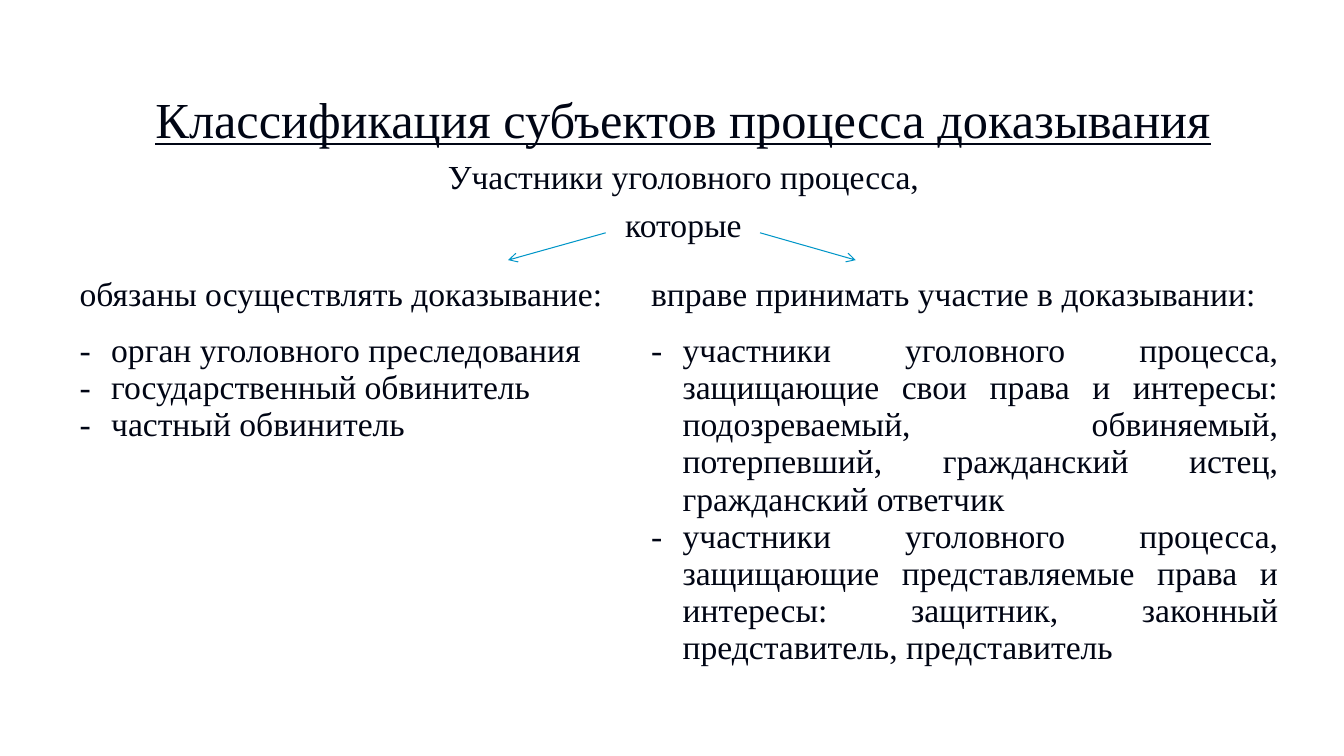
from lxml import etree
from pptx import Presentation
from pptx.dml.color import RGBColor
from pptx.enum.shapes import MSO_CONNECTOR
from pptx.enum.text import PP_ALIGN
from pptx.oxml.ns import qn
from pptx.util import Pt

CENTER, JUSTIFY = PP_ALIGN.CENTER, PP_ALIGN.JUSTIFY
STRAIGHT = MSO_CONNECTOR.STRAIGHT
INK = RGBColor(0x00, 0x05, 0x14)
ARROW_BLUE = RGBColor(0x00, 0x96, 0xC8)
WHITE = RGBColor(0xFF, 0xFF, 0xFF)


def add_text(paragraph, text, size, alignment):
    paragraph.alignment = alignment
    run = paragraph.add_run()
    run.text = text
    run.font.name = "Times New Roman"
    run.font.size = Pt(size)
    run.font.color.rgb = INK
    return run


def add_border(properties, side, width):
    line = etree.SubElement(properties, qn(f"a:ln{side}"), w=str(Pt(width)))
    fill = etree.SubElement(line, qn("a:solidFill"))
    etree.SubElement(fill, qn("a:srgbClr"), val=str(WHITE))


presentation = Presentation()
presentation.slide_width = Pt(960)
presentation.slide_height = Pt(540)
slide = presentation.slides.add_slide(presentation.slide_layouts[6])

heading_box = slide.shapes.add_textbox(Pt(54.7), Pt(59.3), Pt(866.9), Pt(120))
heading_frame = heading_box.text_frame
heading_frame.word_wrap = True
title = add_text(heading_frame.paragraphs[0],
                 "Классификация субъектов процесса доказывания", 36, CENTER)
title.font.underline = True
for text in ("Участники уголовного процесса,", "которые"):
    paragraph = heading_frame.add_paragraph()
    paragraph.space_before = Pt(5.5)
    add_text(paragraph, text, 24, CENTER)

for start, end in ((432.7, 362.9), (542.9, 611.3)):
    arrow = slide.shapes.add_connector(STRAIGHT, Pt(start), Pt(166.3), Pt(end), Pt(185.8))
    arrow.line.color.rgb = ARROW_BLUE
    arrow.line.width = Pt(0.75)
    etree.SubElement(arrow.line._get_or_add_ln(), qn("a:tailEnd"), type="arrow")
    etree.SubElement(arrow._element.spPr, qn("a:effectLst"))

columns = (
    (408.2, "обязаны осуществлять доказывание:", (
        "орган уголовного преследования",
        "государственный обвинитель",
        "частный обвинитель",
    )),
    (462.3, "вправе принимать участие в доказывании:", (
        "участники уголовного процесса, защищающие свои права и интересы: "
        "подозреваемый, обвиняемый, потерпевший, гражданский истец, гражданский ответчик",
        "участники уголовного процесса, защищающие представляемые права и интересы: "
        "защитник, законный представитель, представитель",
    )),
)
table = slide.shapes.add_table(2, 2, Pt(49.7), Pt(193.7), Pt(870.5), Pt(327.6)).table
table.rows[0].height = Pt(40.3)
table.rows[1].height = Pt(287.3)

for column, (width, header, participants) in enumerate(columns):
    table.columns[column].width = Pt(width)
    for row, texts in enumerate(((header,), participants)):
        cell = table.cell(row, column)
        properties = cell._tc.get_or_add_tcPr()
        for side in "LRTB":
            heavy = (row == 0 and side == "B") or (row == 1 and side == "T")
            add_border(properties, side, 3 if heavy else 1)
        cell.fill.solid()
        cell.fill.fore_color.rgb = WHITE
        for index, text in enumerate(texts):
            frame = cell.text_frame
            paragraph = frame.add_paragraph() if index else frame.paragraphs[0]
            if row == 1:
                paragraph_properties = paragraph._p.get_or_add_pPr()
                paragraph_properties.set("marL", str(Pt(22.5)))
                paragraph_properties.set("indent", str(Pt(-22.5)))
                etree.SubElement(paragraph_properties, qn("a:buFont"), typeface="Times New Roman")
                etree.SubElement(paragraph_properties, qn("a:buChar"), char="-")
            run = add_text(paragraph, text, 24, JUSTIFY)
            run.font.bold = False

presentation.save("out.pptx")
